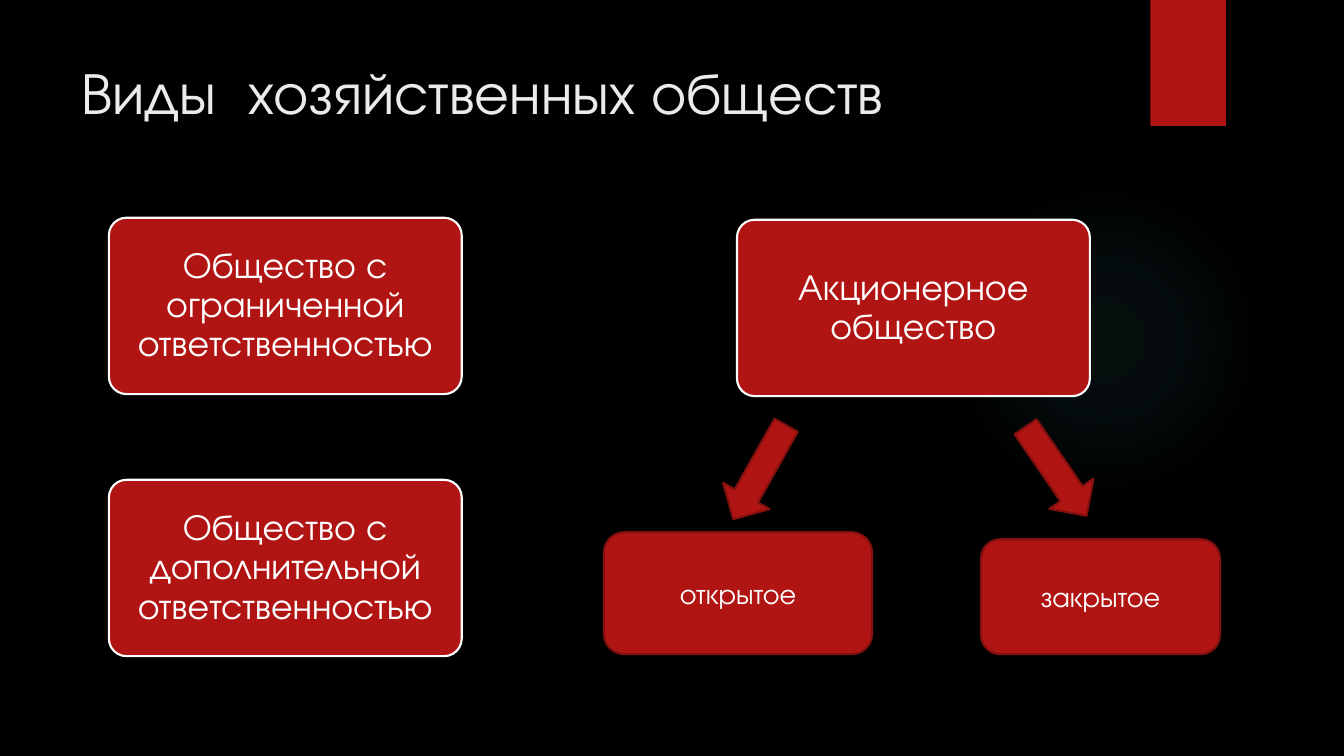
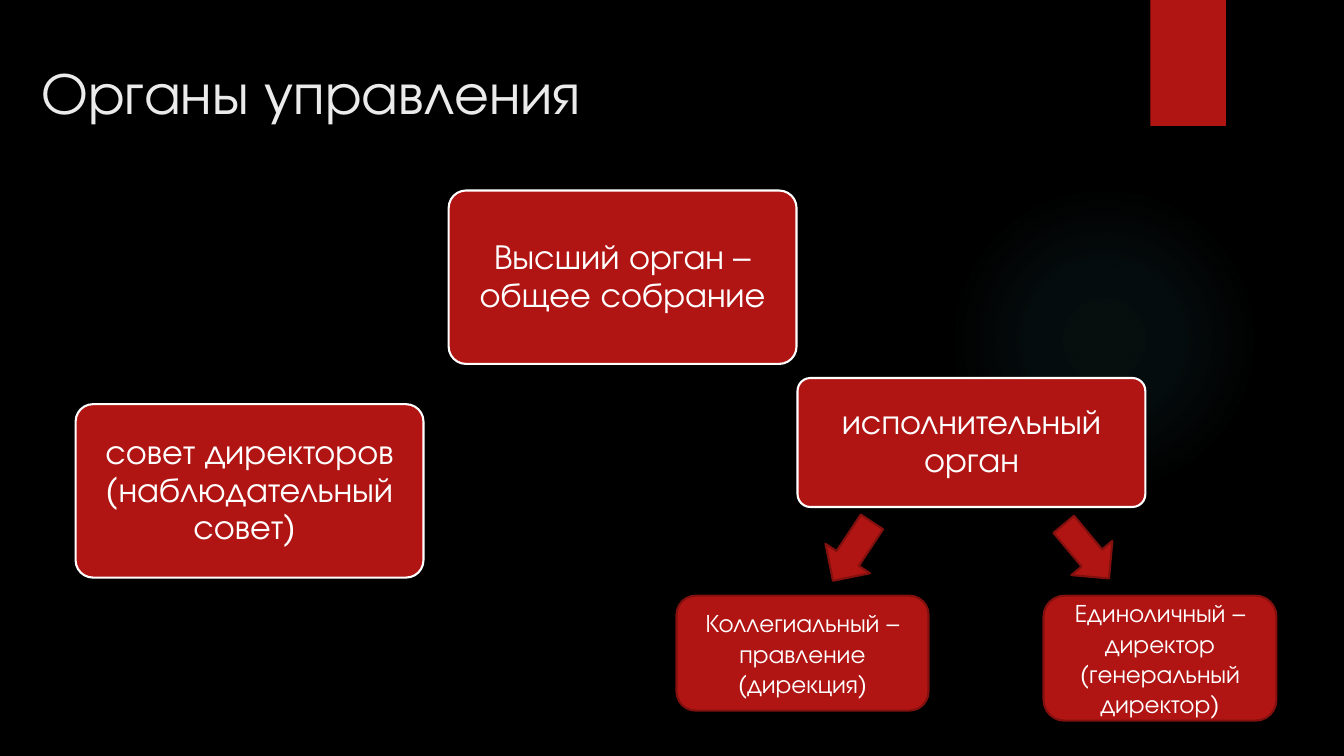
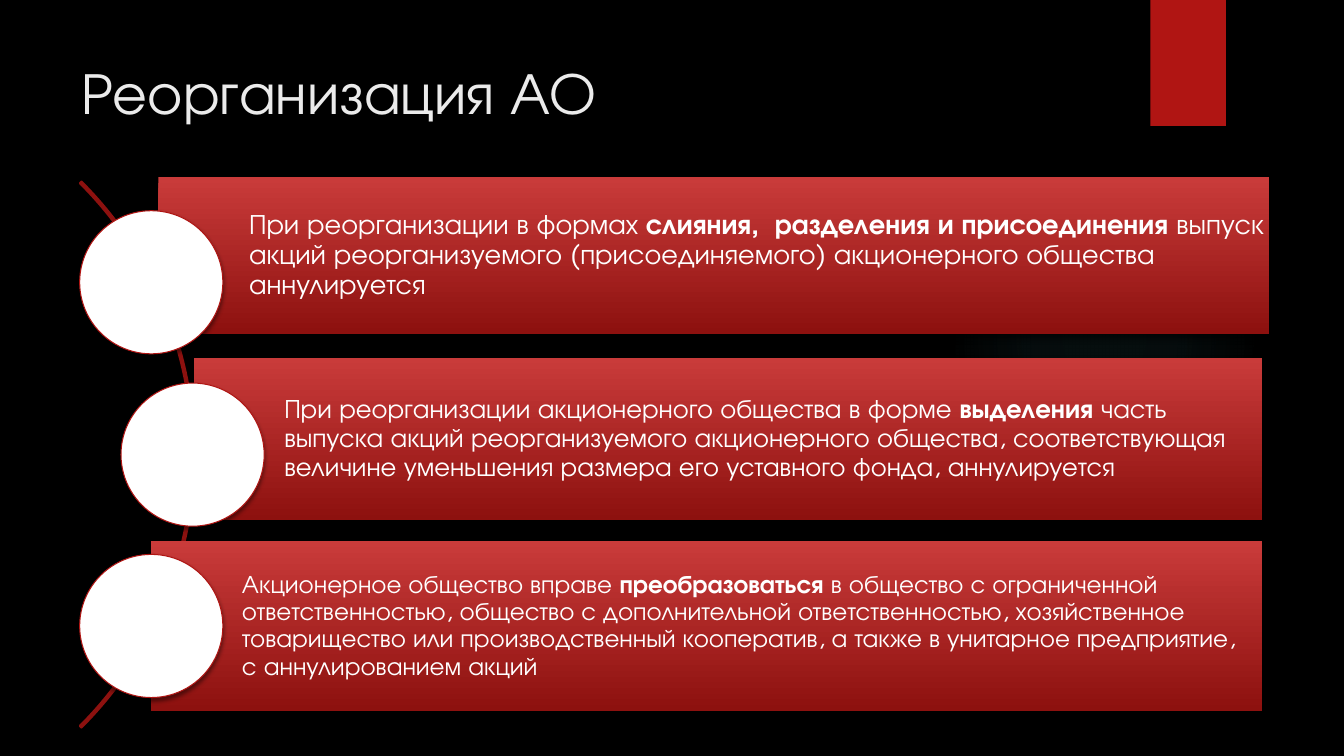
"""Build three slides on business companies, their governing bodies and reorganization."""
from pptx import Presentation
from pptx.dml.color import RGBColor
from pptx.enum.shapes import MSO_SHAPE as SHAPE
from pptx.enum.text import MSO_ANCHOR as ANCHOR, MSO_AUTO_SIZE as AUTO, PP_ALIGN as ALIGN
from pptx.oxml import parse_xml
from pptx.oxml.ns import nsdecls, qn
from pptx.util import Inches, Pt

rgb = RGBColor.from_string
FONT = "TeX Gyre Adventor"
RED, DARK_RED, DEEP_RED, LIGHT_RED = "B01513", "82100E", "8D110F", "C93B3A"
BLACK, WHITE, TITLE, GLOW = "000000", "FFFFFF", "EBEBEB", "50B9C1"


def add_text(shape, text, size, color=WHITE, align=ALIGN.CENTER, anchor=ANCHOR.MIDDLE,
             spacing=1.0, inset=(0.1, 0.05, 0.1, 0.05)):
    """Write text with one paragraph per line and bold between bars."""
    tf = shape.text_frame
    tf.word_wrap = True
    tf.auto_size = AUTO.NONE
    tf.vertical_anchor = anchor
    tf.margin_left, tf.margin_top, tf.margin_right, tf.margin_bottom = map(Inches, inset)
    for i, line in enumerate(text.split("\n")):
        p = tf.add_paragraph() if i else tf.paragraphs[0]
        p.alignment = align
        p.line_spacing = spacing
        for j, part in enumerate(line.split("|")):
            r = p.add_run()
            r.text = part
            r.font.name = FONT
            r.font.size = Pt(size)
            r.font.bold = j % 2 == 1
            r.font.color.rgb = rgb(color)


def add_box(s, kind, at, fill=RED, line=None, width=1.5, shadow=None, rotation=0):
    """Add a preset shape; shadow is opacity percent, blur and distance in points."""
    sp = s.shapes.add_shape(kind, *map(Inches, at))
    sp.shadow.inherit = False
    sp.rotation = rotation
    if isinstance(fill, tuple):
        sp.fill.gradient()
        sp.fill.gradient_angle = 270
        for stop, color, position in zip(sp.fill.gradient_stops, fill, (0, 1)):
            stop.color.rgb = rgb(color)
            stop.position = position
    elif fill:
        sp.fill.solid()
        sp.fill.fore_color.rgb = rgb(fill)
    else:
        sp.fill.background()
    if line:
        sp.line.color.rgb = rgb(line)
        sp.line.width = Pt(width)
    else:
        sp.line.fill.background()
    if shadow:
        alpha, blur, dist = shadow
        sp.element.spPr.find(qn("a:effectLst")).append(parse_xml(
            f'<a:outerShdw {nsdecls("a")} blurRad="{Pt(blur)}" dist="{Pt(dist)}" dir="5400000" '
            f'algn="ctr" rotWithShape="0"><a:srgbClr val="{BLACK}">'
            f'<a:alpha val="{alpha * 1000}"/></a:srgbClr></a:outerShdw>'))
    return sp


prs = Presentation()
prs.slide_width, prs.slide_height = Inches(13.33), Inches(7.5)
bg = prs.slide_master.background.fill
bg.solid()
bg.fore_color.rgb = rgb(BLACK)
layout = prs.slide_layouts.get_by_name("Title Only")

titles = [
    ("Виды  хозяйственных обществ", (0.71, 0.5, 10.29, 1.53)),
    ("Органы управления", (0.31, 0.5, 11.9, 1.06)),
    ("Реорганизация АО", (0.71, 0.5, 10.29, 1.53)),
]
for text, at in titles:
    s = prs.slides.add_slide(layout)
    title = s.shapes.title
    title.left, title.top, title.width, title.height = map(Inches, at)
    add_text(title, text, 42, color=TITLE, align=ALIGN.LEFT, anchor=ANCHOR.TOP)
types, bodies, reorg = prs.slides

glow = add_box(types, SHAPE.OVAL, (9.41, 1.83, 3.08, 3.08), fill=GLOW)
stops = "".join(
    f'<a:gs pos="{pos * 1000}"><a:srgbClr val="{GLOW}"><a:alpha val="{alpha * 1000}"/></a:srgbClr></a:gs>'
    for pos, alpha in ((0, 7), (36, 6), (69, 0)))
spPr = glow.element.spPr
spPr.replace(spPr.find(qn("a:solidFill")), parse_xml(
    f'<a:gradFill {nsdecls("a")}><a:gsLst>{stops}</a:gsLst><a:path path="circle">'
    '<a:fillToRect l="50000" t="50000" r="50000" b="50000"/></a:path></a:gradFill>'))
band = add_box(types, SHAPE.RECTANGLE, (11.41, 0, 0.75, 1.25), shadow=(45, 3, 2))
for sp in (glow, band):
    layout.shapes.element.append(sp.element)

cards = [
    (types, 26, "Общество с ограниченной ответственностью", (1.08, 2.16, 3.5, 1.75)),
    (types, 26, "Общество с дополнительной ответственностью", (1.08, 4.76, 3.5, 1.75)),
    (types, 26, "Акционерное общество", (7.31, 2.18, 3.5, 1.75)),
    (bodies, 25, "Высший орган – общее собрание", (4.45, 1.89, 3.45, 1.72)),
    (bodies, 25, "совет директоров (наблюдательный совет) ", (0.75, 4.01, 3.45, 1.72)),
    (bodies, 25, "исполнительный орган", (7.91, 3.75, 3.45, 1.28)),
]
for s, size, text, at in cards:
    card = add_box(s, SHAPE.ROUNDED_RECTANGLE, at, line=WHITE)
    card.adjustments[0] = 0.1
    add_text(card, text, size, spacing=0.9, inset=(0.05, 0.04, 0.05, 0.04))

arrows = [
    (types, (7.27, 4.15, 0.53, 1.07), 29.4),
    (types, (10.21, 4.14, 0.53, 1.07), 325.6),
    (bodies, (8.19, 5.12, 0.53, 0.7), 33.5),
    (bodies, (10.51, 5.12, 0.53, 0.7), 320.1),
]
for s, at, rotation in arrows:
    add_box(s, SHAPE.DOWN_ARROW, at, line=DARK_RED, rotation=rotation)

branches = [
    (types, 20, "открытое", (5.99, 5.28, 2.66, 1.21)),
    (types, 20, "закрытое", (9.73, 5.35, 2.37, 1.14)),
    (bodies, 18, "Коллегиальный –\nправление (дирекция)", (6.71, 5.91, 2.5, 1.14)),
    (bodies, 18, "Единоличный –\nдиректор\n(генеральный директор)", (10.35, 5.91, 2.31, 1.24)),
]
for s, size, text, at in branches:
    add_text(add_box(s, SHAPE.ROUNDED_RECTANGLE, at, line=DARK_RED), text, size)

arc = add_box(reorg, SHAPE.BLOCK_ARC, (-5.73, 0.68, 7.66, 7.66), fill=None, line=DEEP_RED)
for i, value in enumerate((189, 27, 0.003)):
    arc.adjustments[i] = value

rules = [
    (20, (1.57, 1.76, 11.02, 1.55), (0.79, 2.09),
     "При реорганизации в формах |слияния,  разделения и присоединения |выпуск акций "
     "реорганизуемого (присоединяемого) акционерного общества аннулируется"),
    (19, (1.92, 3.55, 10.6, 1.61), (1.2, 3.8),
     "При реорганизации акционерного общества в форме |выделения| часть выпуска акций "
     "реорганизуемого акционерного общества, соответствующая величине уменьшения размера "
     "его уставного фонда, аннулируется"),
    (18, (1.5, 5.37, 11.02, 1.68), (0.79, 5.5),
     "Акционерное общество вправе |преобразоваться| в общество с ограниченной "
     "ответственностью, общество с дополнительной ответственностью, хозяйственное "
     "товарищество или производственный кооператив, а также в унитарное предприятие, "
     "с аннулированием акций"),
]
for size, at, corner, text in rules:
    bar = add_box(reorg, SHAPE.RECTANGLE, at, fill=(LIGHT_RED, DEEP_RED), shadow=(60, 5, 3))
    add_text(bar, text, size, align=ALIGN.LEFT, spacing=0.9, inset=(0.9, 0.05, 0.05, 0.05))
    add_box(reorg, SHAPE.OVAL, (*corner, 1.42, 1.42), fill=WHITE, line=RED, width=0.75,
            shadow=(45, 3, 2))

prs.save("out.pptx")
